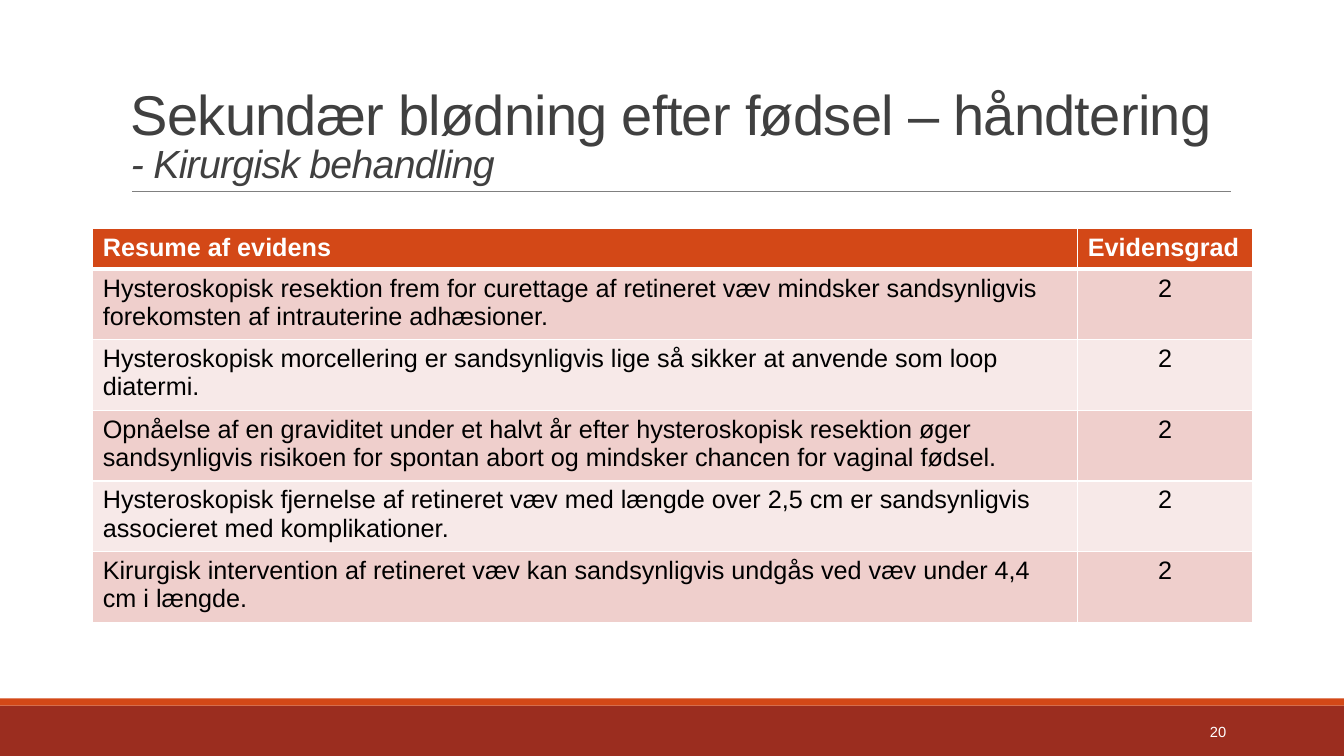
from lxml.etree import SubElement
from pptx import Presentation
from pptx.dml.color import RGBColor
from pptx.enum.shapes import MSO_CONNECTOR as Connector, MSO_SHAPE as Shape
from pptx.enum.text import MSO_ANCHOR as Anchor, PP_ALIGN as Align
from pptx.oxml import parse_xml
from pptx.oxml.ns import nsdecls, qn
from pptx.util import Inches, Pt

WHITE = RGBColor(0xFF, 0xFF, 0xFF)
BLACK = RGBColor(0, 0, 0)
DARK_GRAY = RGBColor(0x40, 0x40, 0x40)
RULE_GRAY = RGBColor(0x80, 0x80, 0x80)
ORANGE = RGBColor(0xD3, 0x48, 0x17)
BRICK = RGBColor(0x9B, 0x2D, 0x1F)
BANDS = (RGBColor(0xEF, 0xCF, 0xCC), RGBColor(0xF7, 0xE9, 0xE8))

HEADINGS = ("Resume af evidens", "Evidensgrad")
EVIDENCE = (
    ("Hysteroskopisk resektion frem for curettage af retineret væv mindsker "
     "sandsynligvis forekomsten af intrauterine adhæsioner.", "2"),
    ("Hysteroskopisk morcellering er sandsynligvis lige så sikker at anvende "
     "som loop diatermi.", "2"),
    ("Opnåelse af en graviditet under et halvt år efter hysteroskopisk resektion "
     "øger sandsynligvis risikoen for spontan abort og mindsker chancen for "
     "vaginal fødsel.", "2"),
    ("Hysteroskopisk fjernelse af retineret væv med længde over 2,5 cm er "
     "sandsynligvis associeret med komplikationer.", "2"),
    ("Kirurgisk intervention af retineret væv kan sandsynligvis undgås ved væv "
     "under 4,4 cm i længde.", "2"),
)


class SlideBuilder:
    font_name = "Arial"

    def __init__(self, slide):
        self.slide = slide

    def bar(self, left, top, width, height, color):
        shape = self.slide.shapes.add_shape(
            Shape.RECTANGLE, *map(Inches, (left, top, width, height)))
        shape.shadow.inherit = False
        shape.fill.solid()
        shape.fill.fore_color.rgb = color
        shape.line.fill.background()

    def rule(self, left, right, top):
        line = self.slide.shapes.add_connector(
            Connector.STRAIGHT, *map(Inches, (left, top, right, top)))
        line.line.color.rgb = RULE_GRAY
        line.line.width = Pt(0.5)
        SubElement(line._element.spPr, qn("a:effectLst"))

    def run(self, paragraph, text, size, color, bold=False, italic=False):
        run = paragraph.add_run()
        run.text = text
        font = run.font
        font.name, font.size = self.font_name, Pt(size)
        font.bold, font.italic = bold, italic
        font.color.rgb = color
        return run

    def text_box(self, left, top, width, height, anchor):
        """Add an empty text box and return its first paragraph."""
        box = self.slide.shapes.add_textbox(
            *map(Inches, (left, top, width, height)))
        box.text_frame.word_wrap = True
        box.text_frame.vertical_anchor = anchor
        return box.text_frame.paragraphs[0]

    def title(self, heading, subheading):
        paragraph = self.text_box(1.2, 0.31, 11, 1.59, Anchor.BOTTOM)
        paragraph.line_spacing = 0.85
        runs = [self.run(paragraph, heading, 40, DARK_GRAY)]
        paragraph.add_line_break()
        runs.append(self.run(paragraph, subheading, 28, DARK_GRAY, italic=True))
        for run in runs:
            run.font._element.set("spc", "-50")

    def page_number(self, number):
        paragraph = self.text_box(10.83, 7.06, 1.43, 0.4, Anchor.MIDDLE)
        paragraph.alignment = Align.RIGHT
        self.run(paragraph, number, 10.5, WHITE)

    def borders(self, cell, top, bottom):
        """Draw white cell borders; top and bottom widths are in points."""
        properties = cell._tc.get_or_add_tcPr()
        sides = (("lnL", 1), ("lnR", 1), ("lnT", top), ("lnB", bottom))
        for index, (side, width) in enumerate(sides):
            properties.insert(index, parse_xml(
                f'<a:{side} {nsdecls("a")} w="{Pt(width)}"><a:solidFill>'
                f'<a:srgbClr val="{WHITE}"/></a:solidFill></a:{side}>'))

    def table(self, left, top, column_widths, header_height, row_height):
        rows = (HEADINGS, *EVIDENCE)
        heights = [header_height] + [row_height] * len(EVIDENCE)
        table = self.slide.shapes.add_table(
            len(rows), len(column_widths), Inches(left), Inches(top),
            Inches(sum(column_widths)), Inches(sum(heights))).table
        for column, width in zip(table.columns, column_widths):
            column.width = Inches(width)
        for row_index, texts in enumerate(rows):
            table.rows[row_index].height = Inches(heights[row_index])
            is_header = row_index == 0
            for column_index, text in enumerate(texts):
                cell = table.cell(row_index, column_index)
                cell.fill.solid()
                cell.fill.fore_color.rgb = (
                    ORANGE if is_header else BANDS[(row_index - 1) % 2])
                self.borders(cell, top=3 if row_index == 1 else 1,
                             bottom=3 if is_header else 1)
                paragraph = cell.text_frame.paragraphs[0]
                if column_index == 1 and not is_header:
                    paragraph.alignment = Align.CENTER
                self.run(paragraph, text, 18, WHITE if is_header else BLACK,
                         bold=is_header)


def main():
    presentation = Presentation()
    presentation.slide_width = Inches(13.33)
    presentation.slide_height = Inches(7.5)
    builder = SlideBuilder(
        presentation.slides.add_slide(presentation.slide_layouts[6]))

    builder.bar(0, 7, 13.33, 0.5, BRICK)
    builder.bar(0, 6.93, 13.33, 0.07, ORANGE)
    builder.rule(1.31, 12.21, 1.9)
    builder.title("Sekundær blødning efter fødsel – håndtering",
                  "- Kirurgisk behandling")
    builder.table(0.92, 2.27, (9.77, 1.73), header_height=0.4, row_height=0.66)
    builder.page_number("20")
    presentation.save("out.pptx")


if __name__ == "__main__":
    main()
